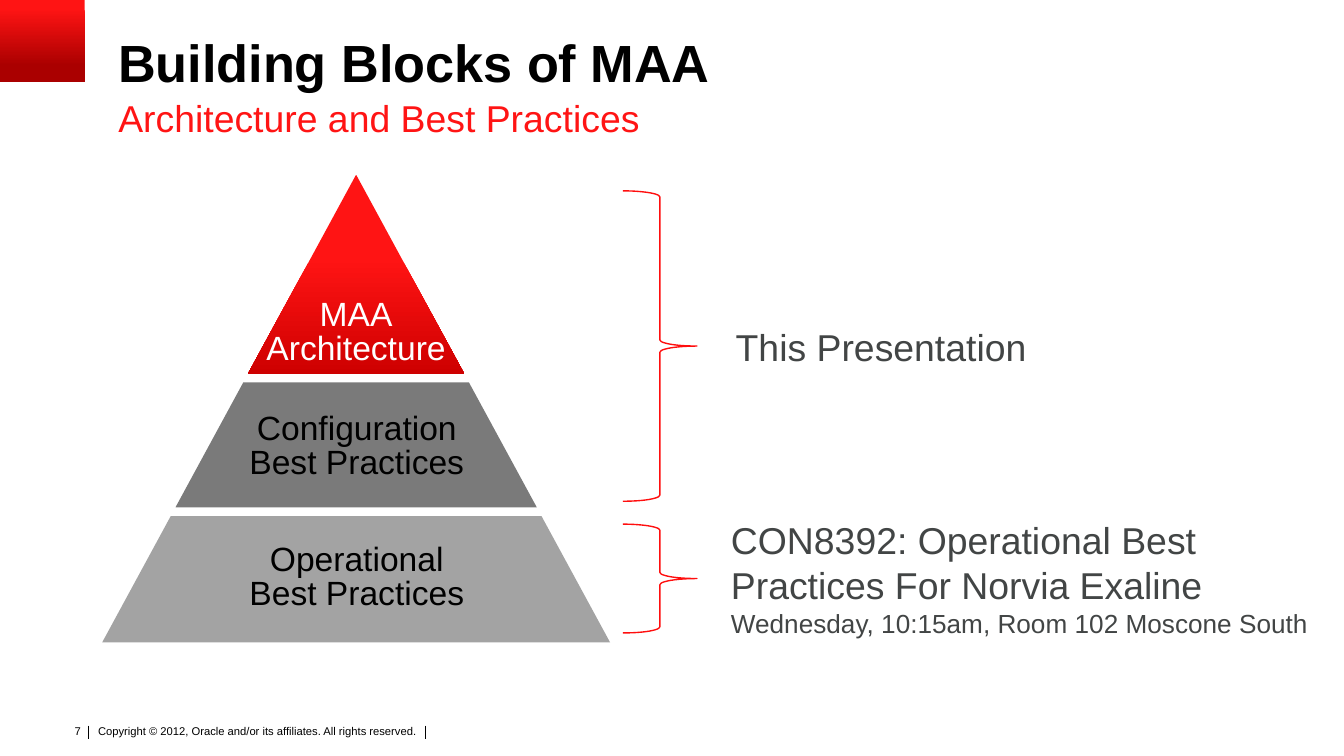
from dataclasses import dataclass
from typing import NamedTuple

from pptx import Presentation
from pptx.dml.color import RGBColor
from pptx.enum.shapes import MSO_CONNECTOR, MSO_SHAPE
from pptx.enum.text import MSO_ANCHOR, PP_ALIGN
from pptx.oxml.ns import qn
from pptx.util import Emu, Inches, Pt

CELL = Inches(0.1)  # the slide is a grid of 100 columns by 56.25 rows
LEFT, MID, RIGHT = PP_ALIGN.LEFT, PP_ALIGN.CENTER, PP_ALIGN.RIGHT
TOP, CENTER = MSO_ANCHOR.TOP, MSO_ANCHOR.MIDDLE
RECT, BRACE = MSO_SHAPE.RECTANGLE, MSO_SHAPE.RIGHT_BRACE
STRAIGHT = MSO_CONNECTOR.STRAIGHT
APEX, PEAK, SLOPE = 26.5, 13, 0.543  # column, row, half width per row


@dataclass(frozen=True)
class Theme:
    font: str = "Arial"
    black: str = "000000"
    white: str = "FFFFFF"
    red: str = "FF1414"
    deep: str = "AA0000"
    wine: str = "CE0000"
    brace: str = "FF0E0E"
    slate: str = "424545"
    dark: str = "7A7A7A"
    pale: str = "A3A3A3"
    title: int = 28
    lead: int = 20
    label: int = 18
    note: int = 14
    foot: int = 6


class Box(NamedTuple):
    col: float
    row: float
    wide: float
    high: float


class Tier(NamedTuple):
    top: float
    end: float
    fill: str
    text: str
    ink: str
    box: Box


class Span(NamedTuple):
    """A brace and the text it points to."""
    brace: Box
    box: Box
    text: str
    sizes: tuple
    wrap: bool


T = Theme()
TIERS = (
    Tier(13, 27.85, "", "MAA\nArchitecture", T.white, Box(18.3, 21.7, 16.4, 6.2)),
    Tier(28.45, 37.75, T.dark, "Configuration\vBest Practices", T.black,
         Box(14.2, 30.15, 24.7, 6.2)),
    Tier(38.4, 47.8, T.pale, "Operational\vBest Practices", T.black,
         Box(17.1, 39.9, 18.9, 6.2)),
)
SPANS = (
    Span(Box(46.35, 14.2, 5.5, 23.1), Box(53.75, 23.6, 23.8, 4.4),
         "This Presentation", (T.lead,), False),
    Span(Box(46.35, 39, 5.5, 8.1), Box(53.4, 38, 46.6, 10.1),
         "CON8392: Operational Best Practices For Norvia Exaline\n"
         "Wednesday, 10:15am, Room 102 Moscone South", (T.lead, T.note), True),
)


def grid(*cells: float) -> list[Emu]:
    return [Emu(round(n * CELL)) for n in cells]


def tint(hue: str) -> RGBColor:
    return RGBColor.from_string(hue)


def write(shape, text: str, sizes: tuple, ink: str, align=LEFT, lines: float = 1,
          bold: bool = False) -> None:
    """Set the text, with one size for each paragraph or one for all."""
    frame = shape.text_frame
    frame.text = text
    for i, para in enumerate(frame.paragraphs):
        para.alignment, para.line_spacing, para.space_before = align, lines, Pt(0)
        for run in para.runs:
            font = run.font
            font.name, font.size, font.bold = T.font, Pt(sizes[min(i, len(sizes) - 1)]), bold
            font.color.rgb = tint(ink)


def pad(frame, side: float, edge: float) -> None:
    frame.margin_left = frame.margin_right = Inches(side)
    frame.margin_top = frame.margin_bottom = Inches(edge)


def label(slide, box: Box, text: str, sizes: tuple, ink: str, wrap: bool = True,
          anchor=TOP, align=LEFT, lines: float = 1):
    shape = slide.shapes.add_textbox(*grid(*box))
    shape.text_frame.word_wrap = wrap
    shape.text_frame.vertical_anchor = anchor
    write(shape, text, sizes, ink, align, lines)
    return shape


def fade(shape, head: tuple, tail: tuple) -> None:
    """Fill from top to bottom between two (position, colour) stops."""
    shape.fill.gradient()
    shape.fill.gradient_angle = 270
    for stop, (spot, hue) in zip(shape.fill.gradient_stops, (head, tail)):
        stop.position, stop.color.rgb = spot, tint(hue)


def preset(slide, kind, box: Box):
    shape = slide.shapes.add_shape(kind, *grid(*box))
    shape.shadow.inherit = False
    return shape


def draw_tier(slide, tier: Tier) -> None:
    up, down = ((row - PEAK) * SLOPE for row in (tier.top, tier.end))
    start, *rest = [tuple(grid(*spot)) for spot in (
        (APEX - up, tier.top), (APEX - down, tier.end),
        (APEX + down, tier.end), (APEX + up, tier.top))]
    pen = slide.shapes.build_freeform(*start, scale=1.0)
    pen.add_line_segments(rest, close=True)
    shape = pen.convert_to_shape()
    shape.shadow.inherit = False
    shape.line.fill.background()
    if tier.fill:
        shape.fill.solid()
        shape.fill.fore_color.rgb = tint(tier.fill)
    else:
        fade(shape, (0.42, T.red), (1, T.wine))


def draw_span(slide, span: Span) -> None:
    brace = preset(slide, BRACE, span.brace)
    brace.fill.background()
    brace.line.color.rgb, brace.line.width = tint(T.brace), Pt(0.75)
    label(slide, span.box, span.text, span.sizes, T.slate, span.wrap)


def draw_foot(slide) -> None:
    note = label(slide, Box(6.9, 53.7, 27.4, 2.4),
                 "Copyright © 2012, Oracle and/or its affiliates. All rights reserved.",
                 (T.foot,), T.black)
    pad(note.text_frame, 0.04, 0.02)
    for col in (6.55, 31.65):
        rule = slide.shapes.add_connector(STRAIGHT, *grid(col, 54, col, 55))
        rule.line.color.rgb, rule.line.width = tint(T.black), Pt(0.5)
        props = rule._element.spPr
        props.append(props.makeelement(qn("a:effectLst"), {}))
    label(slide, Box(3.9, 53.4, 3.1, 2), "7", (T.foot,), T.black, wrap=False, align=RIGHT)


def draw_head(slide) -> None:
    block = preset(slide, RECT, Box(0, 0, 6.3, 6.1))
    block.line.fill.background()
    fade(block, (0.1, T.red), (0.8, T.deep))
    title, body = slide.placeholders
    for shape, box in ((title, Box(8.8, 2.65, 90, 4.4)), (body, Box(8.8, 7.1, 90, 3.3))):
        shape.left, shape.top, shape.width, shape.height = grid(*box)
        pad(shape.text_frame, 0, 0)
    write(title, "Building Blocks of MAA", (T.title,), T.black, lines=0.9, bold=True)
    write(body, "Architecture and Best Practices", (T.lead,), T.red)
    props = body.text_frame.paragraphs[0]._p.get_or_add_pPr()
    props.set("marL", "0")
    props.set("indent", "0")
    props.append(props.makeelement(qn("a:buNone"), {}))


def main() -> None:
    deck = Presentation()
    deck.slide_width, deck.slide_height = grid(100, 56.25)
    slide = deck.slides.add_slide(deck.slide_layouts[1])
    draw_foot(slide)
    draw_head(slide)
    for tier in TIERS:
        draw_tier(slide, tier)
    for tier in TIERS:
        label(slide, tier.box, tier.text, (T.label,), tier.ink, anchor=CENTER,
              align=MID, lines=0.85)
    for span in SPANS:
        draw_span(slide, span)
    deck.save("out.pptx")


if __name__ == "__main__":
    main()
